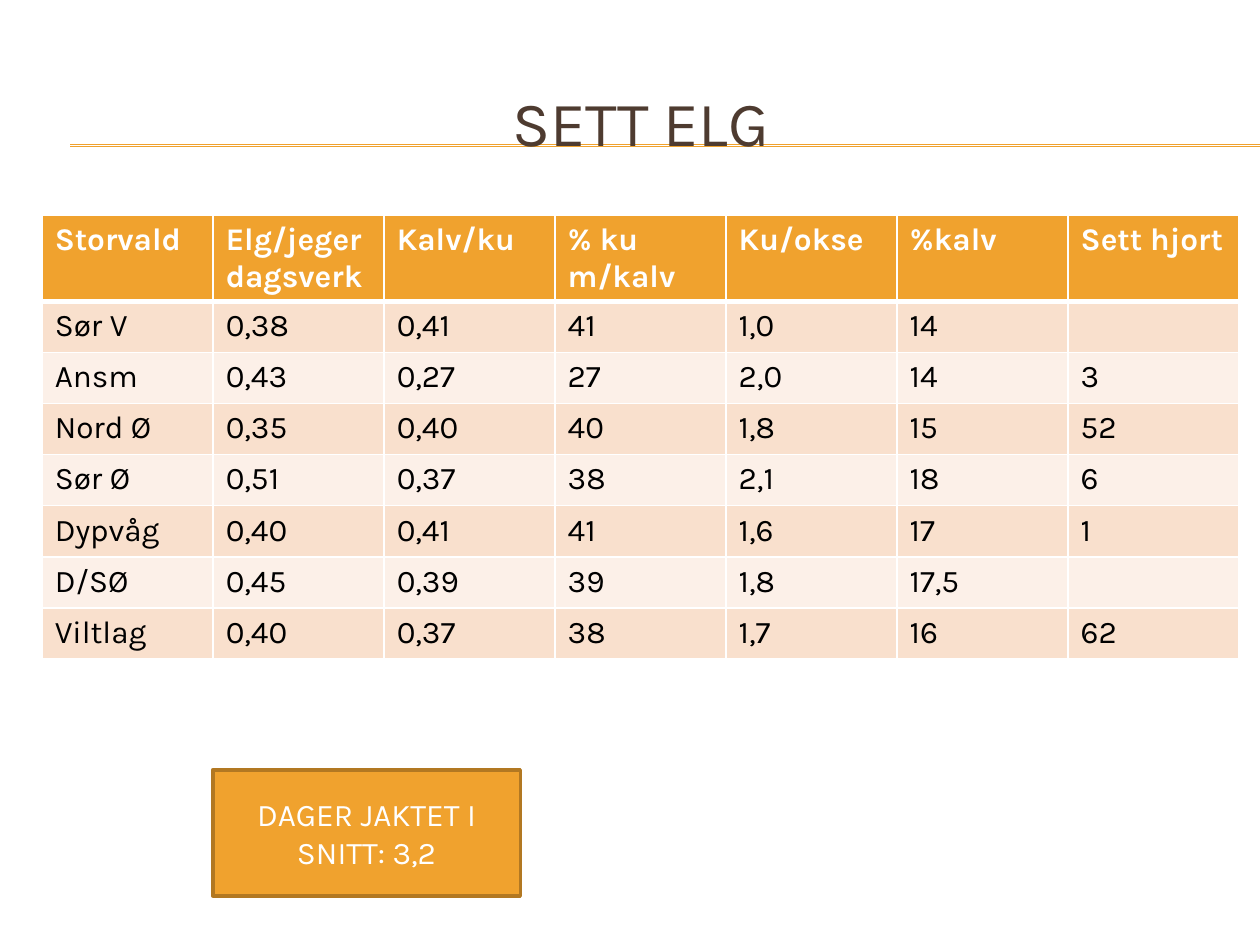
from lxml import etree
from pptx import Presentation
from pptx.dml.color import RGBColor
from pptx.enum.shapes import MSO_CONNECTOR, MSO_SHAPE
from pptx.enum.text import MSO_ANCHOR, MSO_AUTO_SIZE, PP_ALIGN
from pptx.oxml.ns import qn
from pptx.util import Cm, Pt

STRAIGHT = MSO_CONNECTOR.STRAIGHT
RECTANGLE = MSO_SHAPE.RECTANGLE
MIDDLE, TOP = MSO_ANCHOR.MIDDLE, MSO_ANCHOR.TOP
LEFT, CENTER = PP_ALIGN.LEFT, PP_ALIGN.CENTER
NO_AUTOFIT = MSO_AUTO_SIZE.NONE
TITLE_ONLY = 5

FONT = "Karla"
COLORS = {
    "orange": "F0A22E",
    "dark_orange": "B27822",
    "brown": "4E3B30",
    "band": "F9E0CD",
    "light_band": "FCF0E8",
    "white": "FFFFFF",
    "black": "000000",
}

SIGHTINGS = [
    ["Storvald", "Elg/jeger dagsverk", "Kalv/ku", "% ku m/kalv", "Ku/okse", "%kalv", "Sett hjort"],
    ["Sør V", "0,38", "0,41", "41", "1,0", "14", ""],
    ["Ansm", "0,43", "0,27", "27", "2,0", "14", "3"],
    ["Nord Ø", "0,35", "0,40", "40", "1,8", "15", "52"],
    ["Sør Ø", "0,51", "0,37", "38", "2,1", "18", "6"],
    ["Dypvåg", "0,40", "0,41", "41", "1,6", "17", "1"],
    ["D/SØ", "0,45", "0,39", "39", "1,8", "17,5", ""],
    ["Viltlag", "0,40", "0,37", "38", "1,7", "16", "62"],
]


def rgb(name):
    return RGBColor.from_string(COLORS[name])


def write(frame, text, size=18, color="white", bold=False, align=LEFT, anchor=MIDDLE):
    frame.word_wrap = True
    frame.vertical_anchor = anchor
    paragraph = frame.paragraphs[0]
    paragraph.alignment = align
    font = paragraph.font
    if text:
        run = paragraph.add_run()
        run.text = text
        font = run.font
    font.name, font.size, font.bold = FONT, Pt(size), bold
    font.color.rgb = rgb(color)


def set_borders(cell, bottom):
    """Draw white cell borders, 1 pt wide except for the top and bottom given."""
    properties = cell._tc.get_or_add_tcPr()
    widths = {"lnL": 1, "lnR": 1, "lnT": 1, "lnB": bottom}
    for position, (side, width) in enumerate(widths.items()):
        border = etree.Element(qn(f"a:{side}"), w=str(Pt(width)))
        fill = etree.SubElement(border, qn("a:solidFill"))
        etree.SubElement(fill, qn("a:srgbClr"), val=COLORS["white"])
        properties.insert(position, border)


def add_rules(slide, left, top, width, gap):
    """Place the two thin lines that run behind the title."""
    for y in (top, top + gap):
        rule = slide.shapes.add_connector(STRAIGHT, left, y, left + width, y)
        rule.line.color.rgb = rgb("orange")
        rule.line.width = Pt(0.75)
        etree.SubElement(rule._element.spPr, qn("a:effectLst"))


def place_title(slide, left, top, width, height):
    title = slide.shapes.title
    title.left, title.top, title.width, title.height = left, top, width, height
    write(title.text_frame, "SETT ELG", size=36, color="brown", align=CENTER)
    title.text_frame.auto_size = NO_AUTOFIT
    # The title stands in front of the rules
    slide.shapes._spTree.append(title._element)


def add_sightings(slide, left, top, width, row_height):
    rows, columns = len(SIGHTINGS), len(SIGHTINGS[0])
    table = slide.shapes.add_table(rows, columns, left, top, width, row_height * rows).table
    table.horz_banding = False
    for row_index, values in enumerate(SIGHTINGS):
        header = row_index == 0
        band = "band" if row_index % 2 else "light_band"
        for column_index, value in enumerate(values):
            cell = table.cell(row_index, column_index)
            cell.fill.solid()
            cell.fill.fore_color.rgb = rgb("orange" if header else band)
            write(cell.text_frame, value, color="white" if header else "black", bold=header, anchor=TOP)
            set_borders(cell, bottom=3 if header else 1)


def add_average_days(slide, left, top, width, height):
    average = slide.shapes.add_shape(RECTANGLE, left, top, width, height)
    average.shadow.inherit = False
    average.fill.solid()
    average.fill.fore_color.rgb = rgb("orange")
    average.line.color.rgb = rgb("dark_orange")
    average.line.width = Pt(2)
    write(average.text_frame, "DAGER JAKTET I SNITT: 3,2", align=CENTER)


def main():
    presentation = Presentation()
    presentation.slide_width, presentation.slide_height = Cm(25.4), Cm(19.05)
    slide = presentation.slides.add_slide(presentation.slide_layouts[TITLE_ONLY])
    add_rules(slide, Cm(1.42), Cm(2.92), Cm(23.98), Cm(0.03))
    place_title(slide, Cm(0.85), Cm(1.27), Cm(24.13), Cm(2.34))
    add_sightings(slide, Cm(0.85), Cm(4.33), Cm(24.13), Cm(1.03))
    add_average_days(slide, Cm(4.29), Cm(15.52), Cm(6.2), Cm(2.54))
    presentation.save("out.pptx")


if __name__ == "__main__":
    main()
